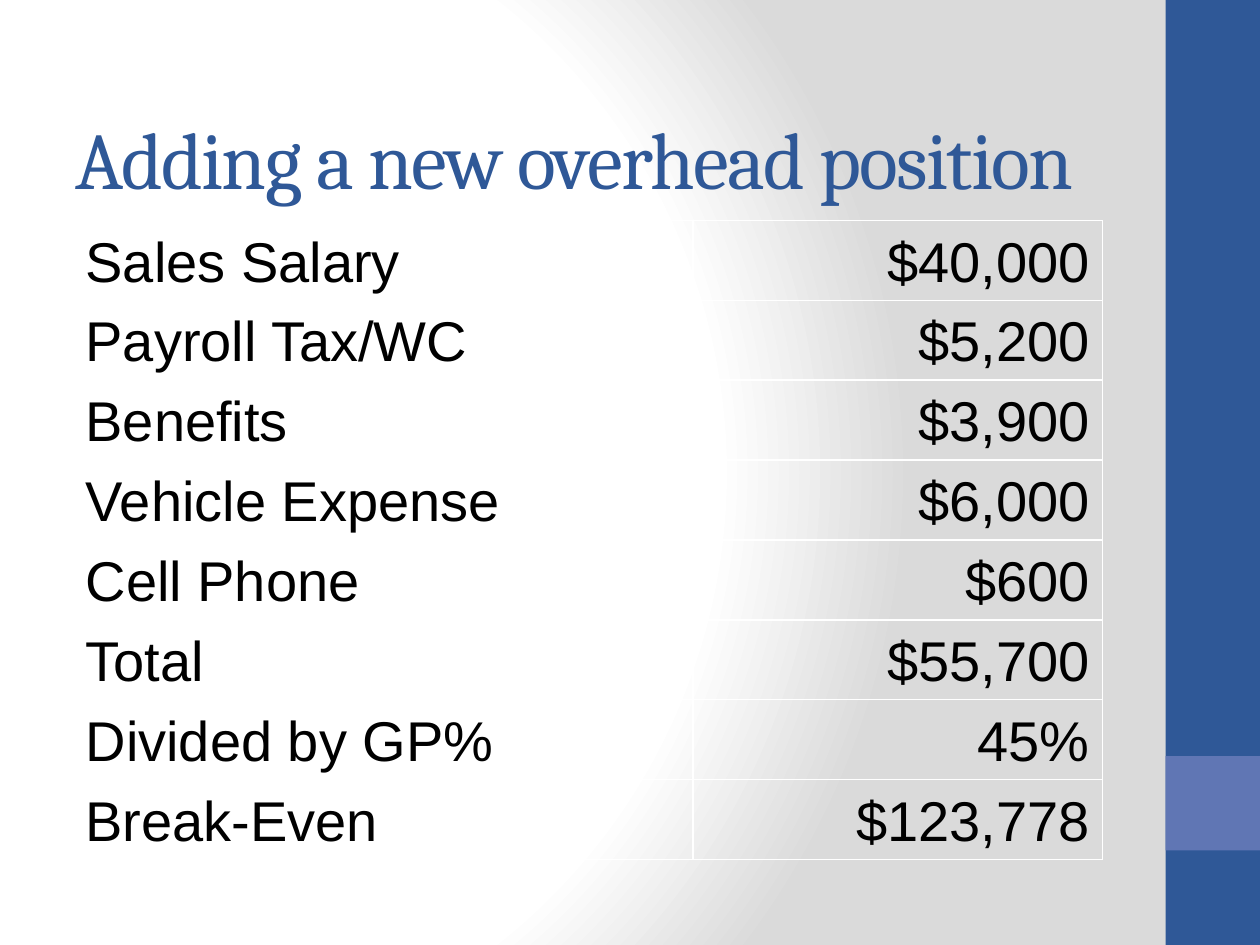
"""Build the slide that costs a new overhead position."""
from pptx import Presentation, oxml
from pptx import util as u
from pptx.dml.color import RGBColor
from pptx.enum import shapes, text
from pptx.oxml import ns

BLUE, LIGHT_BLUE, BLACK = "2F5897", "6076B4", "000000"
BACKGROUND_STOPS = [(0, "FFFFFF"), (75, "FFFFFF"), (100, "DADADA")]
COSTS = [
    ("Sales Salary", "$40,000"),
    ("Payroll Tax/WC", "$5,200"),
    ("Benefits", "$3,900"),
    ("Vehicle Expense", "$6,000"),
    ("Cell Phone", "$600"),
    ("Total", "$55,700"),
    ("Divided by GP%", "45%"),
    ("Break-Even", "$123,778"),
]


def color(value):
    """Turn a hex string into a colour."""
    return RGBColor.from_string(value)


def set_font(paragraph, name, size, value):
    """Format every run of a paragraph."""
    for run in paragraph.runs:
        run.font.name = name
        run.font.size = u.Pt(size)
        run.font.color.rgb = color(value)


def set_background(slide):
    """Fill the background with a circular gradient."""
    slide.background.fill.gradient()
    gradient = slide.element.xpath(".//p:bgPr/a:gradFill")[0]
    stops = "".join(
        f'<a:gs pos="{position * 1000}"><a:srgbClr val="{value}"/></a:gs>'
        for position, value in BACKGROUND_STOPS
    )
    circle = oxml.parse_xml(
        f'<a:gradFill {ns.nsdecls("a")} rotWithShape="1"><a:gsLst>{stops}</a:gsLst>'
        '<a:path path="circle"><a:fillToRect l="20000" t="50000" r="100000" b="50000"/>'
        "</a:path></a:gradFill>"
    )
    gradient.getparent().replace(gradient, circle)


def add_band(slide, top, height, value):
    """Add a plain rectangle on the right edge."""
    band = slide.shapes.add_shape(
        shapes.MSO_SHAPE.RECTANGLE,
        u.Inches(9.25), u.Inches(top), u.Inches(0.75), u.Inches(height),
    )
    band.shadow.inherit = False
    band.fill.solid()
    band.fill.fore_color.rgb = color(value)
    band.line.fill.background()


def add_title(slide, wording):
    """Add the tightly spaced title."""
    title = slide.shapes.add_textbox(
        u.Inches(0.5), u.Inches(0.5), u.Inches(9), u.Inches(1.5)
    )
    frame = title.text_frame
    frame.word_wrap = True
    frame.vertical_anchor = text.MSO_ANCHOR.MIDDLE
    frame.text = wording
    paragraph = frame.paragraphs[0]
    set_font(paragraph, "Cambria", 46, BLUE)
    paragraph.runs[0].font._element.set("spc", "-100")


def fill_cell(cell, wording, alignment):
    """Write one unfilled cell with a hanging indent."""
    cell.fill.background()
    cell.vertical_anchor = text.MSO_ANCHOR.BOTTOM
    cell.text_frame.text = wording
    paragraph = cell.text_frame.paragraphs[0]
    paragraph.alignment = alignment
    properties = paragraph._p.get_or_add_pPr()
    properties.set("marL", str(u.Inches(0.38)))
    properties.set("indent", str(-u.Inches(0.38)))
    set_font(paragraph, "Arial", 32, BLACK)


def add_cost_table(slide):
    """Add the table of costs and amounts."""
    table = slide.shapes.add_table(
        len(COSTS), 2, u.Inches(0.58), u.Inches(1.75), u.Inches(8.17), u.Inches(5.07)
    ).table
    table.first_row = table.horz_banding = False
    for column, width in zip(table.columns, (4.92, 3.25)):
        column.width = u.Inches(width)
    alignments = (text.PP_ALIGN.LEFT, text.PP_ALIGN.RIGHT)
    for row, cost in zip(table.rows, COSTS):
        for cell, wording, alignment in zip(row.cells, cost, alignments):
            fill_cell(cell, wording, alignment)


def main():
    """Build and save the presentation."""
    presentation = Presentation()
    presentation.slide_width = u.Inches(10)
    presentation.slide_height = u.Inches(7.5)
    slide = presentation.slides.add_slide(presentation.slide_layouts[6])
    set_background(slide)
    add_band(slide, 0, 7.5, BLUE)
    add_band(slide, 6, 0.75, LIGHT_BLUE)
    add_title(slide, "Adding a new overhead position")
    add_cost_table(slide)
    presentation.save("out.pptx")


if __name__ == "__main__":
    main()
